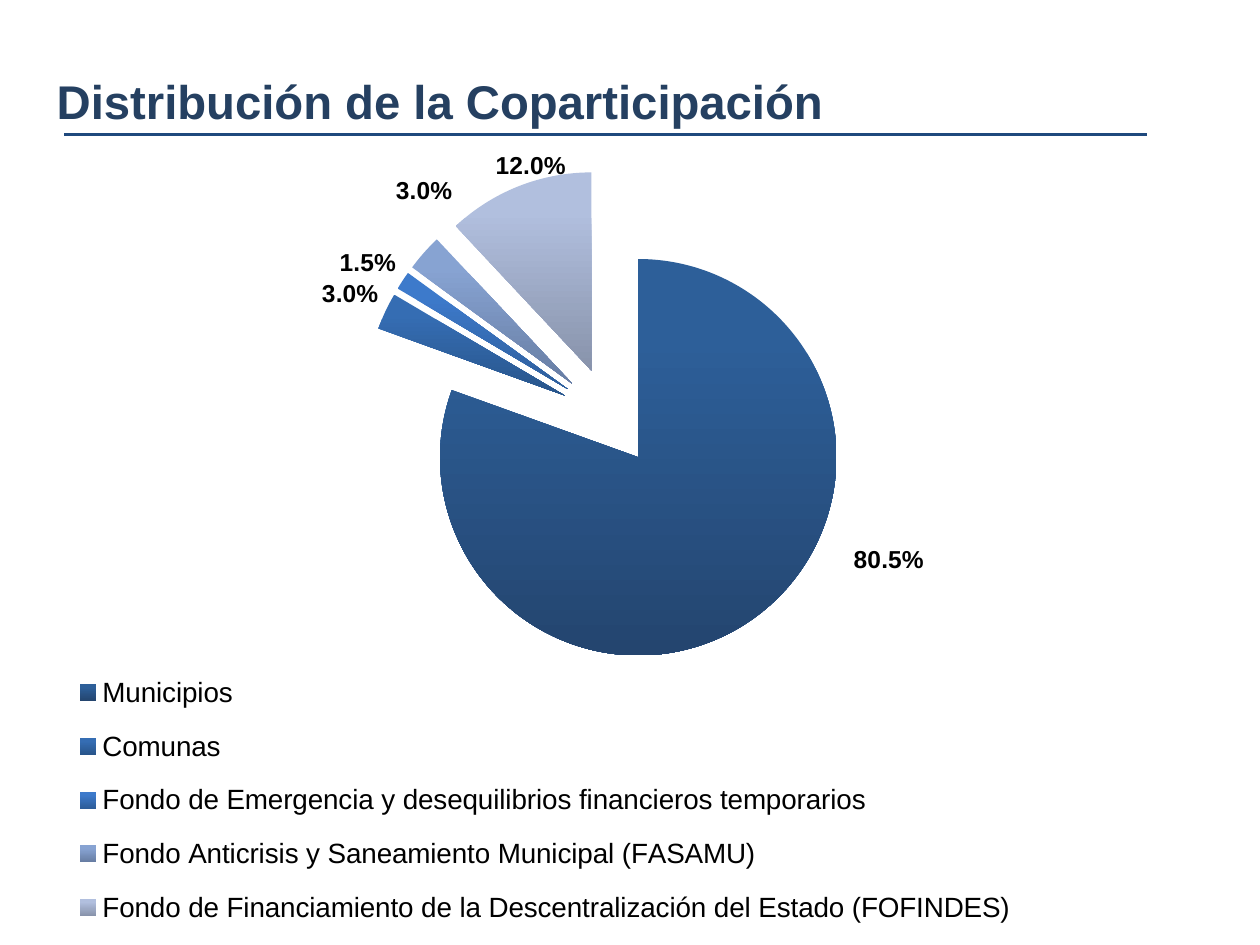
import dataclasses
import typing

import lxml.etree
import pptx
import pptx.chart.data
import pptx.dml.color
import pptx.enum.chart
import pptx.enum.shapes
import pptx.enum.text
import pptx.oxml
import pptx.oxml.ns
import pptx.util

WIDTH, HEIGHT = pptx.util.Inches(10), pptx.util.Inches(7.5)
COLOURS = {"title": "254061", "rule": "1F497D", "text": "000000"}
FONT = "Arial"
PERCENT = "0.0%"
EXPLOSION = 25
SHADING_START = 0.2


@dataclasses.dataclass(frozen=True)
class Frame:
    """A rectangle in percent of the slide or of the chart."""

    left: float
    top: float
    width: float
    height: float

    def lengths(self) -> tuple[int, int, int, int]:
        """Return the rectangle in slide units."""
        return (int(self.left * WIDTH / 100), int(self.top * HEIGHT / 100),
                int(self.width * WIDTH / 100), int(self.height * HEIGHT / 100))


@dataclasses.dataclass(frozen=True)
class Share:
    """One slice: its name, percentage, shading and label shift in percent."""

    name: str
    percent: float
    upper: str
    lower: str
    shift: typing.Optional[tuple[float, float]] = None


SHARES = [
    Share("Municipios", 80.5, "2D5F99", "24456F", (7.9, -9.7)),
    Share("Comunas", 3, "356DB3", "28558B"),
    Share("Fondo de Emergencia y desequilibrios financieros temporarios",
          1.5, "3D7ACB", "2D5D9A"),
    Share("Fondo Anticrisis y Saneamiento Municipal (FASAMU)",
          3, "87A3D2", "677DA3", (2.8, -5.3)),
    Share("Fondo de Financiamiento de la Descentralización del Estado (FOFINDES)",
          12, "B1BFDE", "8893AB", (4.1, 0)),
]
TITLE = Frame(3.5, 6.9, 88.2, 7.5)
RULE = Frame(5.1, 14.25, 85.9, 0)
CHART = Frame(-0.4, 14.25, 97.6, 86.4)
PLOT = Frame(0, 4.2, 100, 60.7)
LEGEND = Frame(3.7, 63.6, 82, 35.8)


def rgb(value: str) -> pptx.dml.color.RGBColor:
    """Turn a hex string into a colour."""
    return pptx.dml.color.RGBColor.from_string(value)


def format_font(font, *, size: float, colour: str, bold: bool = False,
                name: str = FONT) -> None:
    """Set the face, size, weight and colour of a font."""
    font.name, font.size, font.bold = name, pptx.util.Pt(size), bold
    font.color.rgb = rgb(colour)


def write(box, text: str, **style) -> None:
    """Write one left-aligned line of formatted text."""
    frame = box.text_frame
    frame.word_wrap = True
    frame.vertical_anchor = pptx.enum.text.MSO_ANCHOR.MIDDLE
    para = frame.paragraphs[0]
    para.alignment = pptx.enum.text.PP_ALIGN.LEFT
    span = para.add_run()
    span.text = text
    format_font(span.font, **style)


def chart_element(tag: str, **attributes: str):
    """Make an element in the chart namespace."""
    element = pptx.oxml.parse_xml(
        f'<c:{tag} xmlns:c="http://schemas.openxmlformats.org/drawingml/2006/chart"/>')
    for key, value in attributes.items():
        element.set(key, value)
    return element


def manual_layout(modes: dict[str, str], **percents: float):
    """Make a manual layout from its modes and its percentages."""
    layout = chart_element("layout")
    manual = chart_element("manualLayout")
    layout.append(manual)
    for tag, mode in modes.items():
        manual.append(chart_element(tag, val=mode))
    for tag, percent in percents.items():
        manual.append(chart_element(tag, val=f"{percent / 100:.4f}"))
    return layout


def place(parent, frame: Frame, before: str, **modes: str) -> None:
    """Fix a chart part at a frame, in front of the named child."""
    for old in parent.findall(pptx.oxml.ns.qn("c:layout")):
        parent.remove(old)
    layout = manual_layout({**modes, "xMode": "edge", "yMode": "edge"},
                           x=frame.left, y=frame.top, w=frame.width, h=frame.height)
    parent.find(pptx.oxml.ns.qn(before)).addprevious(layout)


def shift_label(label_element, shift: tuple[float, float]) -> None:
    """Move one percentage label away from its default place."""
    qn = pptx.oxml.ns.qn
    label_element.find(qn("c:showVal")).set("val", "0")
    label_element.find(qn("c:showPercent")).set("val", "1")
    index = label_element.find(qn("c:idx"))
    index.addnext(chart_element("numFmt", formatCode=PERCENT, sourceLinked="0"))
    index.addnext(manual_layout({}, x=shift[0], y=shift[1]))


def hide_leader_lines(labels_element) -> None:
    """Switch off the lines between slices and moved labels."""
    for old in labels_element.findall(pptx.oxml.ns.qn("c:showLeaderLines")):
        labels_element.remove(old)
    labels_element.append(chart_element("showLeaderLines", val="0"))


def style_slices(series) -> None:
    """Shade, explode and label the slices."""
    outside = pptx.enum.chart.XL_LABEL_POSITION.OUTSIDE_END
    series._element.find(pptx.oxml.ns.qn("c:tx")).addnext(
        chart_element("explosion", val=str(EXPLOSION)))
    labels = series.data_labels
    labels.show_value, labels.show_percentage = False, True
    labels.number_format, labels.number_format_is_linked = PERCENT, False
    labels.position = outside
    style = dict(size=14, colour=COLOURS["text"], bold=True)
    format_font(labels.font, **style)
    for index, share in enumerate(SHARES):
        point = series.points[index]
        fill = point.format.fill
        fill.gradient()
        fill.gradient_angle = 270
        for stop, colour in zip(fill.gradient_stops, (share.upper, share.lower)):
            stop.color.rgb = rgb(colour)
        fill.gradient_stops[0].position = SHADING_START
        point.format.line.fill.background()
        if share.shift:
            format_font(point.data_label.font, **style)
            point.data_label.position = outside
            shift_label(series._element.xpath(
                f"c:dLbls/c:dLbl[c:idx/@val='{index}']")[0], share.shift)
    hide_leader_lines(series._element.find(pptx.oxml.ns.qn("c:dLbls")))


def add_pie(page) -> None:
    """Add the exploded pie with its legend."""
    data = pptx.chart.data.CategoryChartData()
    data.categories = [share.name for share in SHARES]
    data.add_series("Series 1", [share.percent for share in SHARES])
    chart = page.shapes.add_chart(
        pptx.enum.chart.XL_CHART_TYPE.PIE, *CHART.lengths(), data).chart
    format_font(chart.font, size=17.8, colour=COLOURS["text"], name="Calibri")
    chart.has_title = False
    chart.has_legend = True
    legend = chart.legend
    legend.position = pptx.enum.chart.XL_LEGEND_POSITION.RIGHT
    legend.include_in_layout = False
    format_font(legend.font, size=15.9, colour=COLOURS["text"])
    place(legend._element, LEGEND, "c:overlay")
    plot_area = chart._chartSpace.xpath("c:chart/c:plotArea")[0]
    place(plot_area, PLOT, "c:pieChart", layoutTarget="inner")
    style_slices(chart.plots[0].series[0])


def add_rule(page) -> None:
    """Draw the line below the title."""
    left, top, width, height = RULE.lengths()
    rule = page.shapes.add_connector(
        pptx.enum.shapes.MSO_CONNECTOR.STRAIGHT, left, top, left + width, top + height)
    rule.line.color.rgb = rgb(COLOURS["rule"])
    rule.line.width = pptx.util.Pt(1.5)
    lxml.etree.SubElement(rule._element.spPr, pptx.oxml.ns.qn("a:effectLst"))


def main() -> None:
    """Build the slide and save it."""
    deck = pptx.Presentation()
    deck.slide_width, deck.slide_height = WIDTH, HEIGHT
    page = deck.slides.add_slide(deck.slide_layouts.get_by_name("Title Only"))
    add_pie(page)
    add_rule(page)
    title = page.shapes.title
    title.left, title.top, title.width, title.height = TITLE.lengths()
    write(title, "Distribución de la Coparticipación", size=27,
          colour=COLOURS["title"], bold=True)
    deck.save("out.pptx")


if __name__ == "__main__":
    main()
